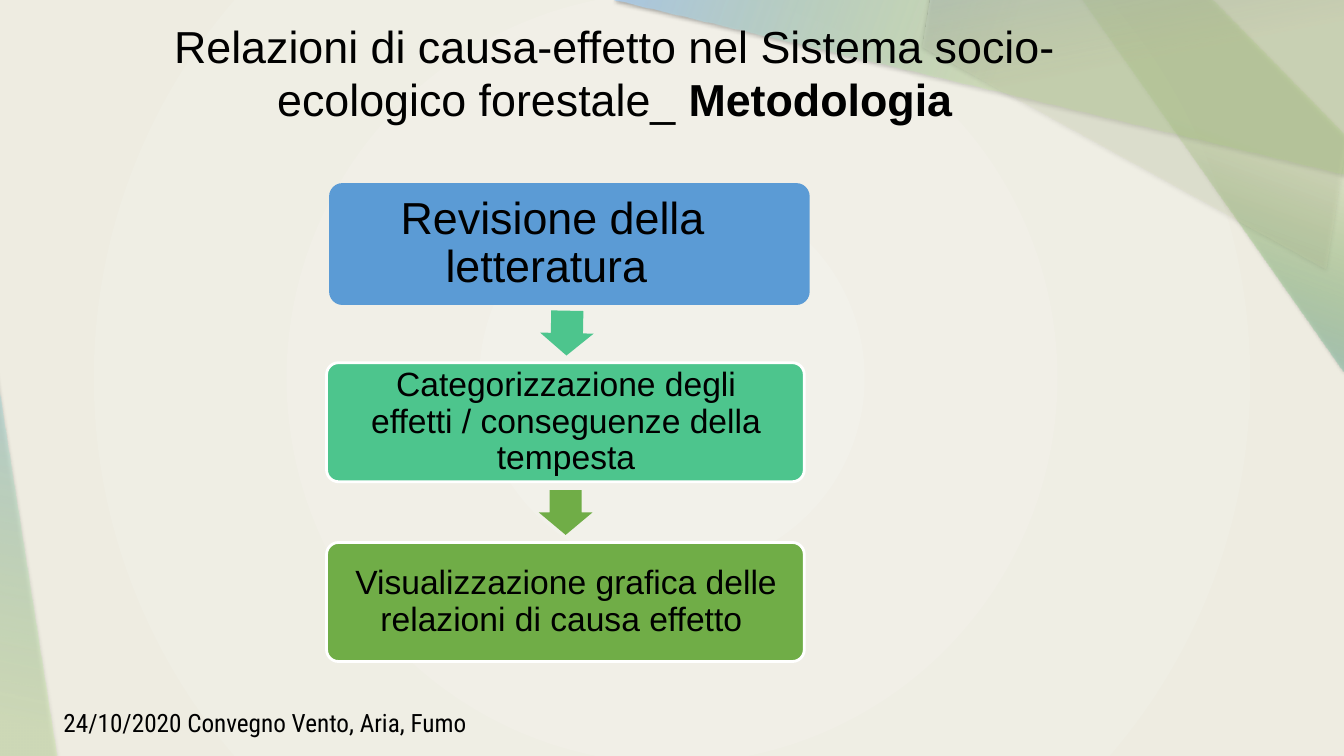
from lxml import etree
from pptx import Presentation
from pptx.dml.color import RGBColor
from pptx.enum.shapes import MSO_SHAPE as Preset
from pptx.enum.text import MSO_ANCHOR as Anchor, PP_ALIGN as Align
from pptx.oxml import parse_xml
from pptx.oxml.ns import nsdecls, qn
from pptx.util import Cm, Pt

BLACK = RGBColor(0x00, 0x00, 0x00)
WHITE = RGBColor(0xFF, 0xFF, 0xFF)
CREAM = RGBColor(0xF2, 0xF1, 0xEA)
SAND = RGBColor(0xEE, 0xEC, 0xE1)
SKY = RGBColor(0xA2, 0xC3, 0xFF)
LIME = RGBColor(0xC8, 0xE9, 0xA1)
LEAF = RGBColor(0x8C, 0xC9, 0x43)
OLIVE = RGBColor(0xD5, 0xDB, 0xAF)
BLUE = RGBColor(0x5B, 0x9B, 0xD5)
MINT = RGBColor(0x4D, 0xC5, 0x8D)
GREEN = RGBColor(0x70, 0xAD, 0x47)

RAYS = [
    ([(-4.32, 18.9), (1.6, 20.14), (-1.04, 3.35)], LIME, 17, 37, 78),
    ([(23.19, -7.54), (15.49, 0), (35.18, 4.7)], LIME, 46, 37, 160),
    ([(36.98, 1.07), (24.82, -3.51), (33.86, 9.35)], LEAF, 53, 13, 250),
    ([(33.4, 6.76), (23.24, 1.17), (24.33, -5.51), (34.47, 0.1)], OLIVE, 44, 20, 101),
]


class ForestSlide:
    font = "Arial"

    def __init__(self, deck):
        self.slide = deck.slides.add_slide(deck.slide_layouts[6])
        self.shapes = self.slide.shapes

    def gradient(self, fill, start, end, position=0):
        fill.gradient()
        first, last = fill.gradient_stops
        first.color.rgb, first.position = start, position
        last.color.rgb, last.position = end, 1

    def background(self, center, edge):
        fill = self.slide.background.fill
        self.gradient(fill, center, edge)
        linear = next(self.slide.element.iter(qn("a:lin")))
        linear.getparent().replace(linear, parse_xml(
            f'<a:path {nsdecls("a")} path="circle">'
            '<a:fillToRect l="50000" t="50000" r="50000" b="50000"/></a:path>'))

    def ray(self, points, color, position, opacity, angle):
        corners = [(Cm(x), Cm(y)) for x, y in points]
        builder = self.shapes.build_freeform(*corners[0])
        builder.add_line_segments(corners[1:], close=True)
        ray = builder.convert_to_shape()
        self.gradient(ray.fill, color, SKY, position / 100)
        ray.fill.gradient_angle = angle
        ray.line.fill.background()
        ray.shadow.inherit = False
        start = next(ray.element.spPr.iter(qn("a:srgbClr")))
        etree.SubElement(start, qn("a:alpha"), val=str(opacity * 1000))
        ray.element.spPr.find(qn("a:effectLst")).append(parse_xml(
            f'<a:outerShdw {nsdecls("a")} blurRad="{Pt(3)}" dist="{Pt(1.8)}" '
            'dir="5400000" rotWithShape="0"><a:srgbClr val="000000">'
            '<a:alpha val="35000"/></a:srgbClr></a:outerShdw>'))

    def preset(self, kind, left, top, width, height, color):
        shape = self.shapes.add_shape(kind, Cm(left), Cm(top), Cm(width), Cm(height))
        shape.shadow.inherit = False
        shape.fill.solid()
        shape.fill.fore_color.rgb = color
        return shape

    def step(self, left, top, color, border, text, size, insets):
        step = self.preset(Preset.ROUNDED_RECTANGLE, left, top, 12.04, 3, color)
        step.adjustments[0] = 0.1
        step.line.color.rgb = border
        step.line.width = Pt(2)
        frame = step.text_frame
        frame.vertical_anchor = Anchor.MIDDLE
        self.set_text(frame, [text], size, insets, Align.CENTER)
        frame.paragraphs[0].line_spacing = 0.9

    def arrow(self, left, top, color, rotation):
        arrow = self.preset(Preset.RIGHT_ARROW, left, top, 1.13, 1.35, color)
        arrow.adjustments[0] = 0.6
        arrow.adjustments[1] = 0.5
        arrow.line.fill.background()
        arrow.rotation = rotation

    def label(self, left, top, width, height, texts, size, align=Align.LEFT, font=None):
        box = self.shapes.add_textbox(Cm(left), Cm(top), Cm(width), Cm(height))
        self.set_text(box.text_frame, texts, size, (0.13, 0.13), align, font)
        return box.text_frame.paragraphs[0]

    def set_text(self, frame, texts, size, insets, align, font=None):
        frame.word_wrap = True
        frame.margin_left, frame.margin_right = map(Cm, insets)
        frame.margin_top = frame.margin_bottom = Cm(0.13)
        paragraph = frame.paragraphs[0]
        for text in texts:
            paragraph.add_run().text = text
        paragraph.alignment = align
        paragraph.font.name = font or self.font
        paragraph.font.size = Pt(size)
        paragraph.font.color.rgb = BLACK


def main():
    deck = Presentation()
    deck.slide_width, deck.slide_height = Cm(33.87), Cm(19.05)
    page = ForestSlide(deck)
    page.background(CREAM, SAND)
    for ray in RAYS:
        page.ray(*ray)

    page.step(8.33, 4.65, BLUE, BLUE, "Revisione della letteratura ", 32, (0, 0.84))
    page.arrow(13.72, 7.72, MINT, 91.1)
    page.step(8.23, 9.14, MINT, WHITE,
              "Categorizzazione degli effetti / conseguenze della tempesta", 24, (0.36, 0.33))
    page.arrow(13.69, 12.24, GREEN, 90)
    page.step(8.23, 13.67, GREEN, WHITE,
              "Visualizzazione grafica delle relazioni di causa effetto ", 24, (0.36, 0.33))

    page.label(1.47, 17.7, 12.12, 1.04, ["24/10/2020 Convegno Vento, Aria, Fumo"], 18,
               font="Roboto Condensed")
    title = page.label(2.72, 0.33, 25.55, 2.95,
                       ["Relazioni di causa-effetto nel Sistema socio-ecologico forestale_ ",
                        "Metodologia"], 32, Align.CENTER)
    title.runs[1].font.bold = True
    deck.save("out.pptx")


if __name__ == "__main__":
    main()
